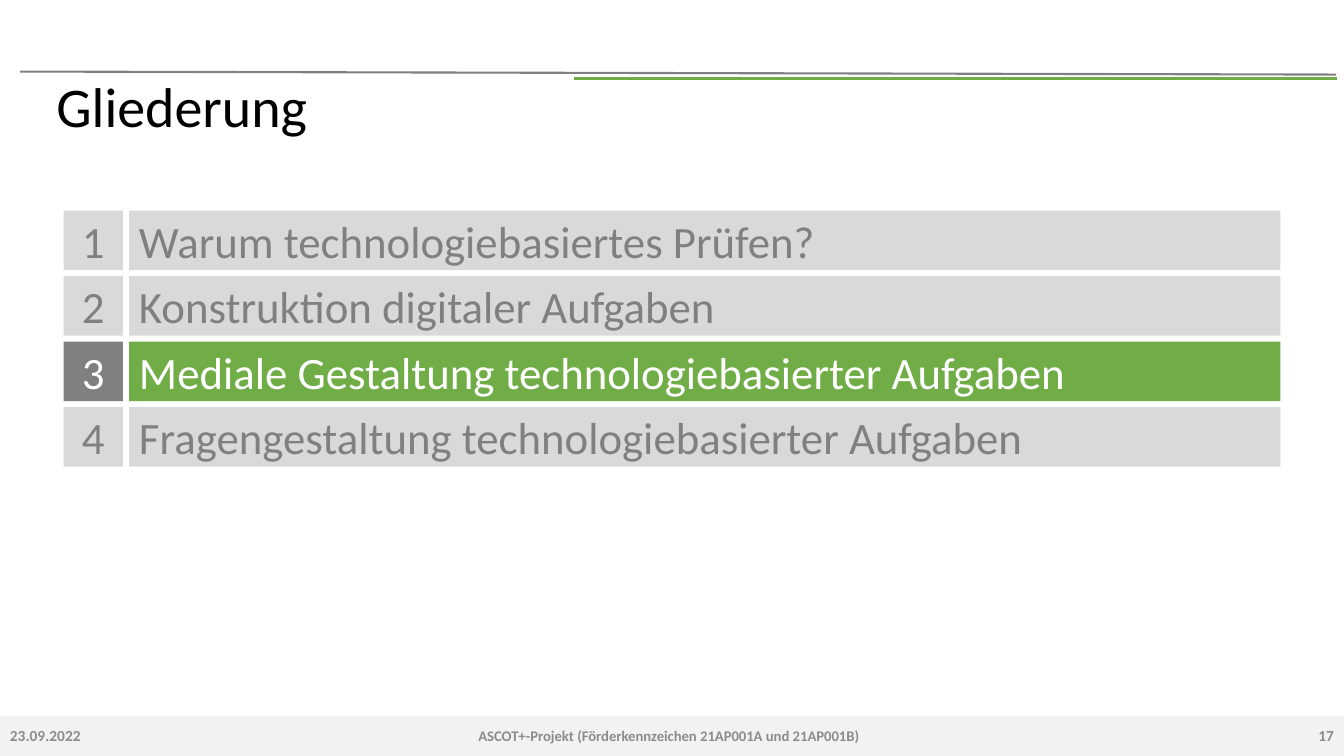
"""Build the outline slide with its third section highlighted."""
from pptx import Presentation
from pptx.dml.color import RGBColor
from pptx.enum.shapes import MSO_CONNECTOR, MSO_SHAPE
from pptx.enum.text import MSO_ANCHOR as ANCHOR, MSO_AUTO_SIZE, PP_ALIGN as ALIGN
from pptx.oxml.ns import qn
from pptx.util import Inches, Pt
from lxml import etree

BLACK = RGBColor(0x00, 0x00, 0x00)
WHITE = RGBColor(0xFF, 0xFF, 0xFF)
GREEN = RGBColor(0x70, 0xAD, 0x47)
GRAY = RGBColor(0x80, 0x80, 0x80)
LIGHT_GRAY = RGBColor(0xD9, 0xD9, 0xD9)
FOOTER_FILL = RGBColor(0xF2, 0xF2, 0xF2)
FOOTER_TEXT = RGBColor(0x8C, 0x8C, 0x8C)


def write(sp, text, size, color, align=ALIGN.LEFT, bold=False):
    tf = sp.text_frame
    tf.word_wrap = True
    tf.auto_size = MSO_AUTO_SIZE.NONE
    tf.vertical_anchor = ANCHOR.MIDDLE
    p = tf.paragraphs[0]
    p.alignment = align
    r = p.add_run()
    r.text = text
    r.font.name = "Calibri"
    r.font.size = Pt(size)
    r.font.bold = bold
    r.font.color.rgb = color
    return p


def add_rect(s, left, top, width, height, fill):
    sp = s.shapes.add_shape(MSO_SHAPE.RECTANGLE, Inches(left), Inches(top),
                            Inches(width), Inches(height))
    sp.shadow.inherit = False
    sp.fill.solid()
    sp.fill.fore_color.rgb = fill
    sp.line.fill.background()
    return sp


prs = Presentation()
prs.slide_width = Inches(13.33)
prs.slide_height = Inches(7.5)
s = prs.slides.add_slide(prs.slide_layouts[5])

title = s.shapes.title
title.left, title.top = Inches(0.46), Inches(0.79)
title.width, title.height = Inches(12.2), Inches(0.59)
write(title, "Gliederung", 40, BLACK).line_spacing = 0.9

header_lines = [
    (0.2, 0.71, 13.25, 0.74, GRAY, 1.5),
    (5.69, 0.78, 13.26, 0.78, GREEN, 2.25),
]
for x1, y1, x2, y2, color, weight in header_lines:
    line = s.shapes.add_connector(MSO_CONNECTOR.STRAIGHT, Inches(x1), Inches(y1),
                                  Inches(x2), Inches(y2))
    line.line.color.rgb = color
    line.line.width = Pt(weight)
    etree.SubElement(line._element.spPr, qn("a:effectLst"))

add_rect(s, 0, 7.1, 13.33, 0.4, FOOTER_FILL)
footer = [
    (0, 1.7, "23.09.2022", 11, ALIGN.LEFT),
    (1.7, 9.87, "ASCOT+-Projekt (Förderkennzeichen 21AP001A und 21AP001B)", 10.5, ALIGN.CENTER),
    (11.69, 1.64, "17", 11, ALIGN.RIGHT),
]
for left, width, text, size, align in footer:
    box = s.shapes.add_textbox(Inches(left), Inches(7.1), Inches(width), Inches(0.4))
    write(box, text, size, FOOTER_TEXT, align, bold=True)

sections = [
    "Warum technologiebasiertes Prüfen?",
    "Konstruktion digitaler Aufgaben",
    "Mediale Gestaltung technologiebasierter Aufgaben",
    "Fragengestaltung technologiebasierter Aufgaben",
]
current = 3
for number, section in enumerate(sections, 1):
    top = 2.09 + 0.65 * (number - 1)
    number_fill, section_fill, color = LIGHT_GRAY, LIGHT_GRAY, GRAY
    if number == current:
        number_fill, section_fill, color = GRAY, GREEN, WHITE
    write(add_rect(s, 0.63, top, 0.59, 0.59, number_fill), str(number), 32, color, ALIGN.CENTER)
    write(add_rect(s, 1.28, top, 11.42, 0.59, section_fill), section, 32, color)

prs.save("out.pptx")
